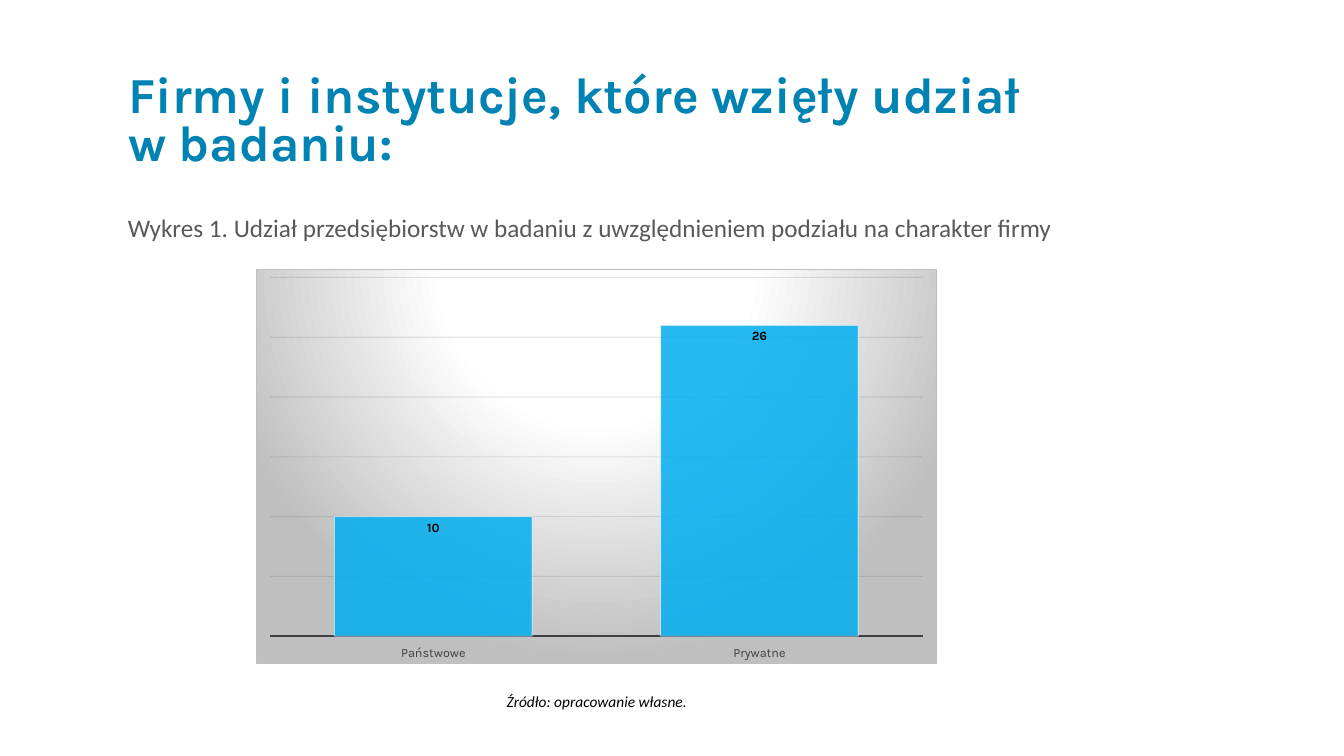
from lxml import etree
from pptx import Presentation
from pptx.chart.data import CategoryChartData
from pptx.dml.color import RGBColor
from pptx.enum.chart import XL_CHART_TYPE, XL_LABEL_POSITION, XL_TICK_LABEL_POSITION, XL_TICK_MARK
from pptx.enum.shapes import MSO_SHAPE
from pptx.enum.text import MSO_ANCHOR, MSO_AUTO_SIZE, PP_ALIGN
from pptx.oxml import parse_xml
from pptx.oxml.ns import nsdecls, qn
from pptx.util import Inches, Pt

COLUMN_CLUSTERED = XL_CHART_TYPE.COLUMN_CLUSTERED
INSIDE_END = XL_LABEL_POSITION.INSIDE_END
LABELS_LOW = XL_TICK_LABEL_POSITION.LOW
NO_TICK = XL_TICK_MARK.NONE
RECTANGLE = MSO_SHAPE.RECTANGLE
BOTTOM = MSO_ANCHOR.BOTTOM
MIDDLE = MSO_ANCHOR.MIDDLE
NO_AUTOFIT = MSO_AUTO_SIZE.NONE
LEFT = PP_ALIGN.LEFT
CENTER = PP_ALIGN.CENTER

TITLE_BLUE = RGBColor(0x00, 0x83, 0xB3)
BAR_BLUE = RGBColor(0x00, 0xAE, 0xEF)
CAPTION_GRAY = RGBColor(0x59, 0x59, 0x59)
AXIS_GRAY = RGBColor(0x40, 0x40, 0x40)
GRID_GRAY = RGBColor(0x0D, 0x0D, 0x0D)
WHITE = RGBColor(0xFF, 0xFF, 0xFF)
BLACK = RGBColor(0x00, 0x00, 0x00)


def style_font(font, name, size, color, bold=False, italic=False):
    font.name = name
    font.size = Pt(size)
    font.color.rgb = color
    font.bold = bold
    font.italic = italic


def set_opacity(color_format_owner, percent):
    for color in color_format_owner.iter(qn("a:srgbClr")):
        etree.SubElement(color, qn("a:alpha")).set("val", str(percent * 1000))


presentation = Presentation()
presentation.slide_width = Inches(13.33)
presentation.slide_height = Inches(7.5)
slide = presentation.slides.add_slide(presentation.slide_layouts[5])

title = slide.shapes.title
title.left, title.top = Inches(1.17), Inches(0.58)
title.width, title.height = Inches(9.5), Inches(1.17)
title.text_frame.text = "Firmy i instytucje, które wzięły udział \vw badaniu:"
title.text_frame.auto_size = NO_AUTOFIT
title.text_frame.vertical_anchor = BOTTOM
paragraph = title.text_frame.paragraphs[0]
paragraph.alignment = LEFT
paragraph.line_spacing = 0.8
for run in paragraph.runs:
    style_font(run.font, "Karla", 36, TITLE_BLUE, bold=True)

chart_data = CategoryChartData(number_format="###0")
chart_data.categories = ["Państwowe", "Prywatne"]
chart_data.add_series("Series 1", [10, 26])
chart = slide.shapes.add_chart(
    COLUMN_CLUSTERED, Inches(2.54), Inches(2.67), Inches(6.75), Inches(3.92), chart_data
).chart
chart.has_legend = False
chart.has_title = False
style_font(chart.font, "Karla", 10, BLACK)

category_axis = chart.category_axis
category_axis.major_tick_mark = NO_TICK
category_axis.tick_label_position = LABELS_LOW
category_axis.format.line.color.rgb = AXIS_GRAY
category_axis.format.line.width = Pt(1.5)
style_font(category_axis.tick_labels.font, "Karla", 9, AXIS_GRAY)

value_axis = chart.value_axis
value_axis.minimum_scale, value_axis.maximum_scale, value_axis.major_unit = 0, 30, 5
value_axis.visible = False
gridline = value_axis.major_gridlines.format.line
gridline.color.rgb = GRID_GRAY
gridline.width = Pt(0.75)
set_opacity(value_axis.major_gridlines._xAx.find(qn("c:majorGridlines")), 10)

plot = chart.plots[0]
plot.gap_width = 65
plot.vary_by_categories = False
series = plot.series[0]
series.format.fill.solid()
series.format.fill.fore_color.rgb = BAR_BLUE
series_properties = series._element.find(qn("c:spPr"))
set_opacity(series_properties, 85)
series.format.line.color.rgb = WHITE
series.format.line.width = Pt(0.75)
set_opacity(series_properties.find(qn("a:ln")), 50)
data_labels = series.data_labels
data_labels.show_value = True
data_labels.position = INSIDE_END
data_labels.number_format = "###0"
data_labels.number_format_is_linked = False
style_font(data_labels.font, "Karla", 9, BLACK, bold=True)

chart_element = chart._chartSpace.find(qn("c:chart"))
chart_element.addnext(parse_xml(
    f'<c:spPr {nsdecls("c", "a")}><a:gradFill><a:gsLst>'
    '<a:gs pos="0"><a:srgbClr val="FFFFFF"/></a:gs>'
    '<a:gs pos="39000"><a:srgbClr val="FFFFFF"/></a:gs>'
    '<a:gs pos="100000"><a:srgbClr val="BFBFBF"/></a:gs></a:gsLst>'
    '<a:path path="circle"><a:fillToRect l="50000" t="-80000" r="50000" b="180000"/></a:path>'
    '</a:gradFill><a:ln w="9525"><a:solidFill><a:srgbClr val="BFBFBF"/></a:solidFill></a:ln></c:spPr>'
))
plot_area = chart_element.find(qn("c:plotArea"))
for layout in plot_area.findall(qn("c:layout")):
    plot_area.remove(layout)
plot_area.insert(0, parse_xml(
    f'<c:layout {nsdecls("c")}><c:manualLayout><c:layoutTarget val="inner"/>'
    '<c:xMode val="edge"/><c:yMode val="edge"/><c:x val="0.02"/><c:y val="0.02"/>'
    '<c:w val="0.96"/><c:h val="0.91"/></c:manualLayout></c:layout>'
))

caption = slide.shapes.add_textbox(Inches(1.17), Inches(2.06), Inches(9.5), Inches(0.4))
caption.text_frame.word_wrap = True
caption.text_frame.text = (
    "Wykres 1. Udział przedsiębiorstw w badaniu z uwzględnieniem podziału na charakter firmy"
)
style_font(caption.text_frame.paragraphs[0].runs[0].font, "Calibri", 18, CAPTION_GRAY)

source_note = slide.shapes.add_shape(RECTANGLE, Inches(3.79), Inches(6.82), Inches(4.26), Inches(0.27))
source_note.shadow.inherit = False
source_note.fill.solid()
source_note.fill.fore_color.rgb = WHITE
source_note.line.fill.background()
source_note.text_frame.word_wrap = True
source_note.text_frame.vertical_anchor = MIDDLE
source_note.text_frame.text = "Źródło: opracowanie własne."
paragraph = source_note.text_frame.paragraphs[0]
paragraph.alignment = CENTER
paragraph.line_spacing = 1.07
style_font(paragraph.runs[0].font, "Calibri", 11, BLACK, italic=True)

presentation.save("out.pptx")
